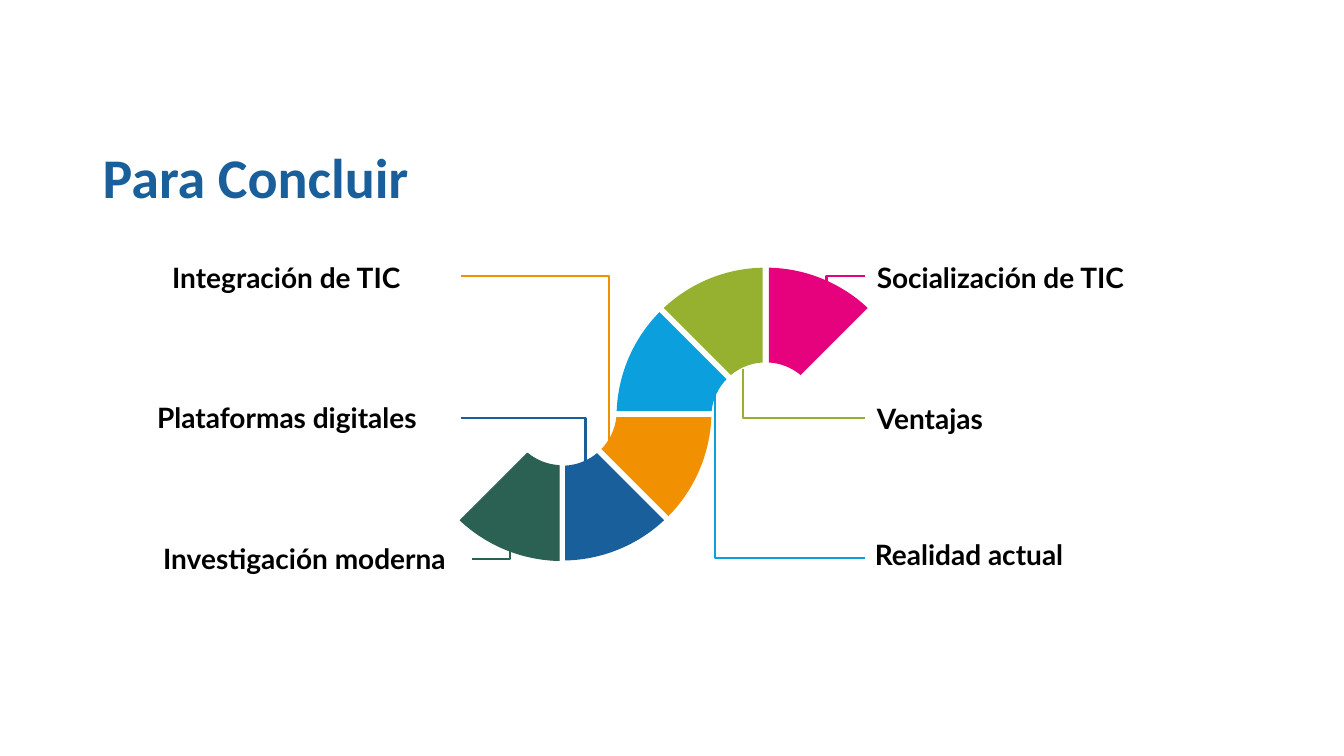
"""Closing slide: six labelled ring sectors forming an S."""
import math
from dataclasses import dataclass

import lxml.etree
import pptx
import pptx.dml.color
import pptx.enum.shapes
import pptx.enum.text
import pptx.oxml.ns
import pptx.util
from pptx.util import Pt


@dataclass(frozen=True)
class Theme:
    title_font: str = "Calibri"
    label_font: str = "Lato"
    title_size: float = 40
    label_size: float = 20
    leader_width: float = 1.5
    outline_width: float = 0.75
    text: str = "000000"
    navy: str = "185F9B"
    sky: str = "0C9FDE"
    lime: str = "95B12F"
    pink: str = "E6017D"
    teal: str = "2A6152"
    orange: str = "F19101"


T = Theme()
OUTER, INNER, TRIM = 106.6, 38.9, 2.16
HUB_Y = 295.8
UPPER = (547, 2)
LOWER = (401.6, -2)

ITEMS = [
    ("Realidad actual", (617.8, 380.2, 179.3), (617.8, 398.9), (510.5, 280.8), T.sky, UPPER, 180),
    ("Plataformas digitales", (105.1, 282.2, 226), (329, 298.8), (418.3, 343.4), T.navy, LOWER, 45),
    ("Ventajas", (619.2, 283, 179.3), (617.8, 298.8), (530.9, 263.5), T.lime, UPPER, 225),
    ("Socialización de TIC", (619.2, 182.2, 237.6), (617.8, 197.3), (590.4, 246.2), T.pink, UPPER, 270),
    ("Investigación moderna", (109.4, 383, 236.2), (337, 399.6), (364.3, 358.6), T.teal, LOWER, 90),
    ("Integración de TIC", (115.9, 182.2, 213), (329, 197.3), (435.3, 324.7), T.orange, LOWER, 0),
]


def rgb(value):
    return pptx.dml.color.RGBColor.from_string(value)


def add_xml(parent, tag, **attrs):
    return lxml.etree.SubElement(parent, pptx.oxml.ns.qn(tag), **attrs)


def write(tf, text, *, font, size, color, anchor, spacing=None):
    tf.word_wrap = True
    tf.auto_size = pptx.enum.text.MSO_AUTO_SIZE.NONE
    tf.vertical_anchor = anchor
    p = tf.paragraphs[0]
    p.alignment = pptx.enum.text.PP_ALIGN.LEFT
    p.line_spacing = spacing
    r = p.add_run()
    r.text = text
    r.font.name, r.font.size, r.font.bold = font, Pt(size), True
    r.font.color.rgb = rgb(color)


def add_title(s, text):
    sp = s.shapes.title
    sp.left, sp.top, sp.width, sp.height = Pt(66.2), Pt(82.8), Pt(828), Pt(71.3)
    write(sp.text_frame, text, font=T.title_font, size=T.title_size, color=T.navy,
          anchor=pptx.enum.text.MSO_ANCHOR.BOTTOM, spacing=0.9)


def add_label(s, text, left, top, width):
    sp = s.shapes.add_textbox(Pt(left), Pt(top), Pt(width), Pt(31.7))
    write(sp.text_frame, text, font=T.label_font, size=T.label_size, color=T.text,
          anchor=pptx.enum.text.MSO_ANCHOR.TOP)


def add_leader(s, start, end, color):
    elbow = pptx.enum.shapes.MSO_CONNECTOR.ELBOW
    sp = s.shapes.add_connector(elbow, *(Pt(v) for v in start + end))
    sp.line.color.rgb = rgb(color)
    sp.line.width = Pt(T.leader_width)
    spPr = sp._element.spPr
    add_xml(spPr.prstGeom.get_or_add_avLst(), "a:gd", name="adj1", fmla="val 100000")
    add_xml(spPr, "a:effectLst")


def edge_angle(angle, side, shift, radius):
    """Angle on the shifted arc where a trimmed edge through the hub meets it."""
    a = math.radians(angle)
    return a + math.asin((side * TRIM - shift * math.cos(a)) / radius)


def arc(hub, start, radius):
    """Four Bezier points of one sector arc."""
    x, shift = hub
    first = edge_angle(start, 1, shift, radius)
    last = edge_angle(start + 45, -1, shift, radius)
    pull = 4 / 3 * math.tan((last - first) / 4)
    return [(x + radius * (math.cos(a) - k * math.sin(a)),
             HUB_Y + shift + radius * (math.sin(a) + k * math.cos(a)))
            for a, k in ((first, 0), (first, pull), (last, -pull), (last, 0))]


def curve(sp):
    """Turn the two arcs of a sector outline into Bezier curves."""
    lines = list(sp._element.iter(pptx.oxml.ns.qn("a:lnTo")))
    for group in (lines[:3], lines[4:7]):
        bezier = lxml.etree.Element(pptx.oxml.ns.qn("a:cubicBezTo"))
        group[0].addprevious(bezier)
        for line in group:
            bezier.append(line[0])
            line.getparent().remove(line)


def add_sector(s, hub, start, color):
    points = arc(hub, start, OUTER) + arc(hub, start, INNER)[::-1]
    points = [(x * 100, y * 100) for x, y in points]
    fb = s.shapes.build_freeform(*points[0], scale=Pt(0.01))
    fb.add_line_segments(points[1:], close=True)
    sp = fb.convert_to_shape()
    curve(sp)
    sp.shadow.inherit = False
    sp.fill.solid()
    sp.fill.fore_color.rgb = rgb(color)
    if color == T.teal:
        sp.line.color.rgb = rgb(color)
        sp.line.width = Pt(T.outline_width)
    else:
        sp.line.fill.background()


def main():
    prs = pptx.Presentation()
    prs.slide_width, prs.slide_height = Pt(960), Pt(540)
    s = prs.slides.add_slide(prs.slide_layouts[5])
    add_title(s, "Para Concluir")
    for _, _, start, end, color, _, _ in ITEMS:
        add_leader(s, start, end, color)
    for _, _, _, _, color, hub, angle in ITEMS:
        add_sector(s, hub, angle, color)
    for text, box, *_ in ITEMS:
        add_label(s, text, *box)
    prs.save("out.pptx")


if __name__ == "__main__":
    main()
